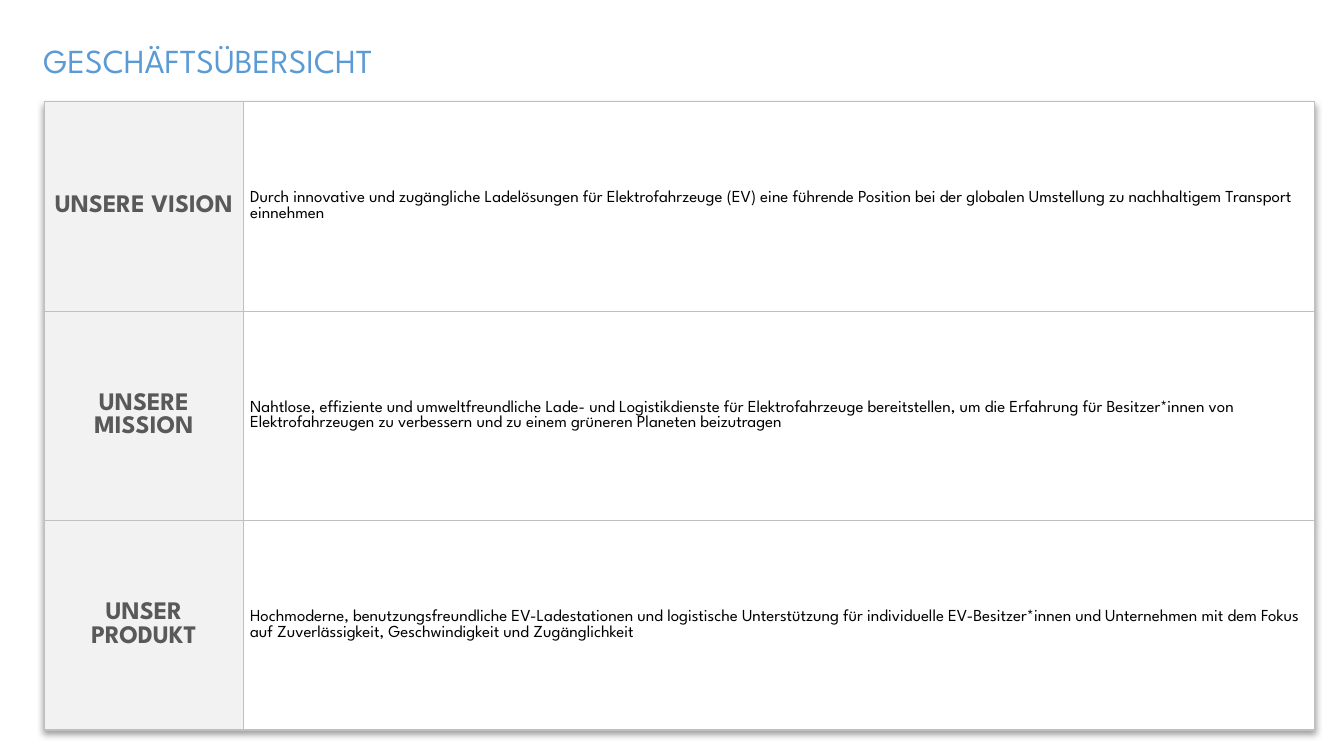
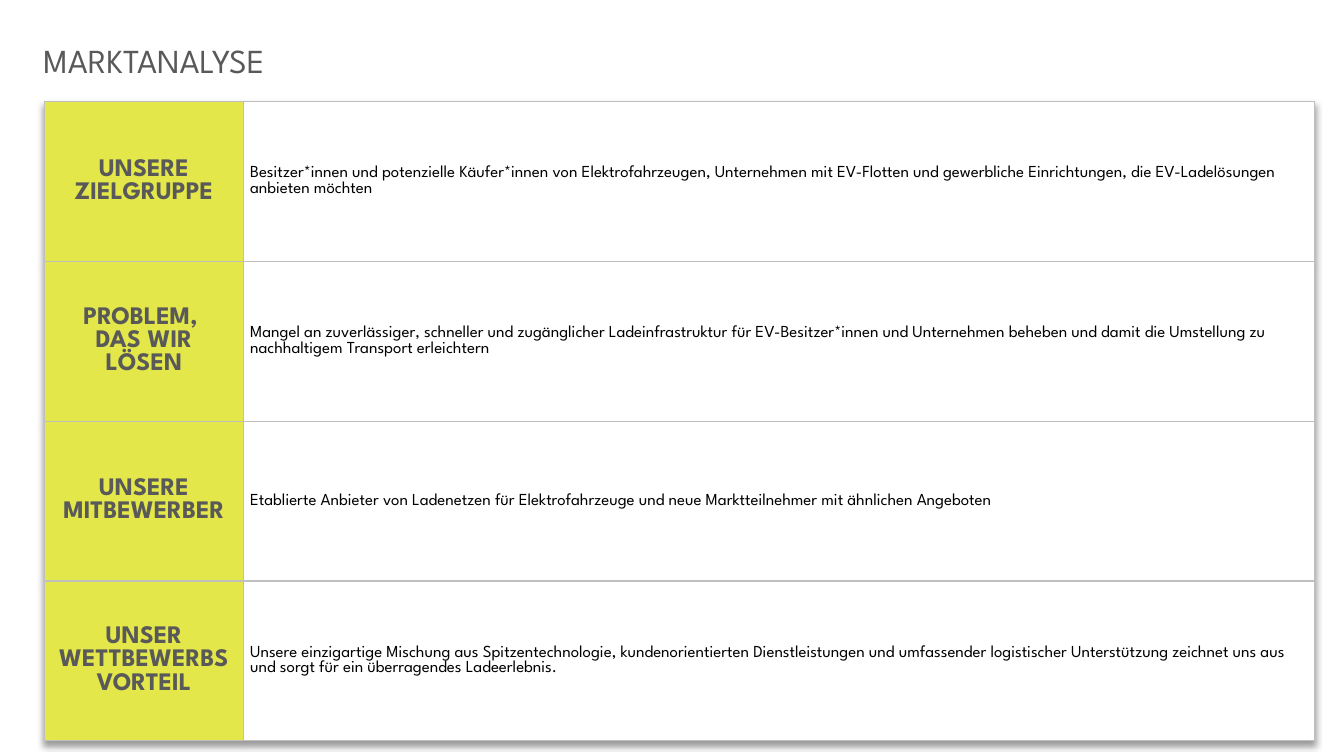
from dataclasses import dataclass

from lxml import etree
from pptx import Presentation
from pptx.dml.color import RGBColor
from pptx.enum.text import MSO_ANCHOR, PP_ALIGN
from pptx.oxml.ns import qn
from pptx.util import Pt

LEFT, CENTER = PP_ALIGN.LEFT, PP_ALIGN.CENTER
MIDDLE, BOTTOM = MSO_ANCHOR.MIDDLE, MSO_ANCHOR.BOTTOM
BLANK_LAYOUT = 6


@dataclass(frozen=True)
class Theme:
    font: str = "League Spartan"
    blue: str = "5B9BD5"
    gray: str = "595959"
    black: str = "000000"
    white: str = "FFFFFF"
    pale: str = "F2F2F2"
    lime: str = "E3E749"
    border: str = "BFBFBF"
    border_width: float = 1
    title_size: float = 24
    label_size: float = 18
    body_size: float = 12


@dataclass(frozen=True)
class Box:
    left: float
    top: float
    width: float
    height: float

    def lengths(self):
        return Pt(self.left), Pt(self.top), Pt(self.width), Pt(self.height)


THEME = Theme()
PAGE_WIDTH, PAGE_HEIGHT = 960, 540
TITLE_BOX = Box(24, 25.2, 582, 36)
TABLE_LEFT, TABLE_TOP, TABLE_WIDTH = 31.9, 72.7, 907.2
LABEL_WIDTH = 141.8

PAGES = [
    {
        "title": "GESCHÄFTSÜBERSICHT",
        "title_color": THEME.blue,
        "label_fill": THEME.pale,
        "table_height": 448.8,
        "rows": [
            ("UNSERE VISION",
             "Durch innovative und zugängliche Ladelösungen für Elektrofahrzeuge (EV) eine "
             "führende Position bei der globalen Umstellung zu nachhaltigem Transport einnehmen"),
            ("UNSERE MISSION",
             "Nahtlose, effiziente und umweltfreundliche Lade- und Logistikdienste für "
             "Elektrofahrzeuge bereitstellen, um die Erfahrung für Besitzer*innen von "
             "Elektrofahrzeugen zu verbessern und zu einem grüneren Planeten beizutragen"),
            ("UNSER PRODUKT",
             "Hochmoderne, benutzungsfreundliche EV-Ladestationen und logistische Unterstützung "
             "für individuelle EV-Besitzer*innen und Unternehmen mit dem Fokus auf "
             "Zuverlässigkeit, Geschwindigkeit und Zugänglichkeit"),
        ],
    },
    {
        "title": "MARKTANALYSE",
        "title_color": THEME.gray,
        "label_fill": THEME.lime,
        "table_height": 456.4,
        "rows": [
            ("UNSERE ZIELGRUPPE",
             "Besitzer*innen und potenzielle Käufer*innen von Elektrofahrzeugen, Unternehmen mit "
             "EV-Flotten und gewerbliche Einrichtungen, die EV-Ladelösungen anbieten möchten"),
            ("PROBLEM, \vDAS WIR LÖSEN",
             "Mangel an zuverlässiger, schneller und zugänglicher Ladeinfrastruktur für "
             "EV-Besitzer*innen und Unternehmen beheben und damit die Umstellung zu "
             "nachhaltigem Transport erleichtern"),
            ("UNSERE MITBEWERBER",
             "Etablierte Anbieter von Ladenetzen für Elektrofahrzeuge und neue Marktteilnehmer "
             "mit ähnlichen Angeboten"),
            ("UNSER WETTBEWERBSVORTEIL",
             "Unsere einzigartige Mischung aus Spitzentechnologie, kundenorientierten "
             "Dienstleistungen und umfassender logistischer Unterstützung zeichnet uns aus und "
             "sorgt für ein überragendes Ladeerlebnis."),
        ],
    },
]


def write_text(frame, text, *, size, color, bold=False, align=LEFT):
    frame.word_wrap = True
    para = frame.paragraphs[0]
    para.text = text
    para.alignment = align
    for span in para.runs:
        span.font.name = THEME.font
        span.font.size = Pt(size)
        span.font.bold = bold
        span.font.color.rgb = RGBColor.from_string(color)


def add_color(parent, color):
    """Append a colour element to an XML fill or effect and return it."""
    return etree.SubElement(parent, qn("a:srgbClr"), val=color)


def set_borders(cell):
    properties = cell._tc.get_or_add_tcPr()
    for position, side in enumerate(("a:lnL", "a:lnR", "a:lnT", "a:lnB")):
        line = etree.Element(qn(side), w=str(Pt(THEME.border_width)))
        add_color(etree.SubElement(line, qn("a:solidFill")), THEME.border)
        properties.insert(position, line)


def add_table_shadow(table):
    effects = etree.Element(qn("a:effectLst"))
    shadow = etree.SubElement(
        effects, qn("a:outerShdw"), blurRad=str(Pt(4)), dist=str(Pt(3)),
        dir="5400000", algn="t", rotWithShape="0")
    etree.SubElement(add_color(shadow, THEME.black), qn("a:alpha"), val="40000")
    table._tbl.tblPr.insert(0, effects)


def format_cell(cell, text, fill, **text_format):
    cell.fill.solid()
    cell.fill.fore_color.rgb = RGBColor.from_string(fill)
    cell.vertical_anchor = MIDDLE
    write_text(cell.text_frame, text, **text_format)
    set_borders(cell)


def add_title(page, box, text, color):
    frame = page.shapes.add_textbox(*box.lengths()).text_frame
    frame.vertical_anchor = BOTTOM
    write_text(frame, text, size=THEME.title_size, color=color)


def add_statement_table(page, box, rows, label_fill):
    """Add a table with a bold label and a statement in each row."""
    table = page.shapes.add_table(len(rows), 2, *box.lengths()).table
    table.first_row = False
    table.horz_banding = False
    add_table_shadow(table)
    table.columns[0].width = Pt(LABEL_WIDTH)
    table.columns[1].width = Pt(box.width - LABEL_WIDTH)

    for index, (label, statement) in enumerate(rows):
        table.rows[index].height = Pt(box.height / len(rows))
        format_cell(table.cell(index, 0), label, label_fill, size=THEME.label_size,
                    color=THEME.gray, bold=True, align=CENTER)
        body = table.cell(index, 1)
        body.margin_left = body.margin_right = Pt(5)
        body.margin_top = body.margin_bottom = 0
        format_cell(body, statement, THEME.white, size=THEME.body_size, color=THEME.black)


def add_statement_page(deck, content):
    page = deck.slides.add_slide(deck.slide_layouts[BLANK_LAYOUT])
    add_title(page, TITLE_BOX, content["title"], content["title_color"])
    table_box = Box(TABLE_LEFT, TABLE_TOP, TABLE_WIDTH, content["table_height"])
    add_statement_table(page, table_box, content["rows"], content["label_fill"])


def main():
    deck = Presentation()
    deck.slide_width, deck.slide_height = Pt(PAGE_WIDTH), Pt(PAGE_HEIGHT)
    for content in PAGES:
        add_statement_page(deck, content)
    deck.save("out.pptx")


if __name__ == "__main__":
    main()
